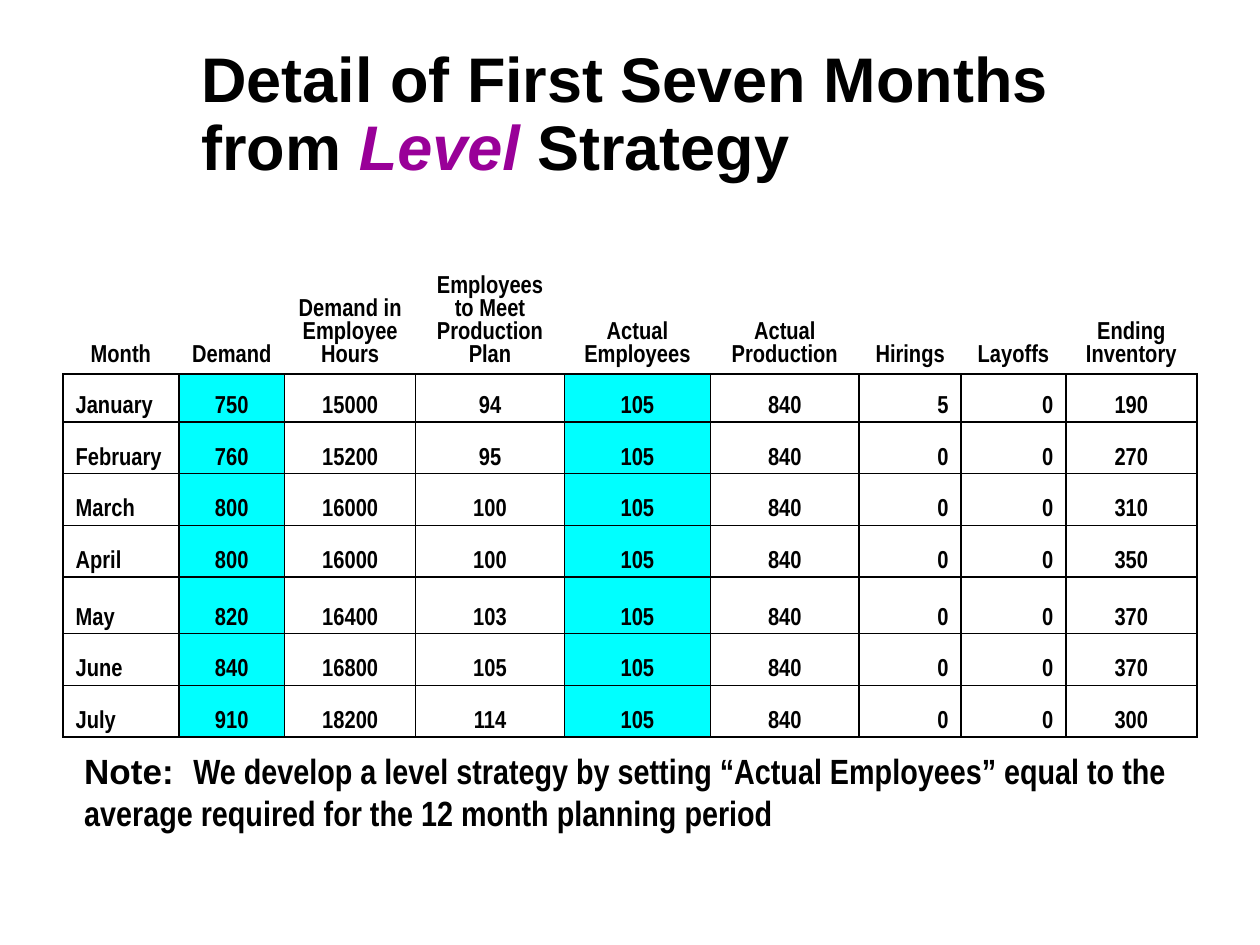
from lxml import etree
from pptx import Presentation
from pptx.dml.color import RGBColor
from pptx.enum.text import MSO_ANCHOR, PP_ALIGN
from pptx.oxml.ns import qn
from pptx.util import Inches, Pt

LEFT, CENTER, RIGHT = PP_ALIGN.LEFT, PP_ALIGN.CENTER, PP_ALIGN.RIGHT
TOP, MIDDLE, BOTTOM = MSO_ANCHOR.TOP, MSO_ANCHOR.MIDDLE, MSO_ANCHOR.BOTTOM

BLACK = RGBColor(0x00, 0x00, 0x00)
PURPLE = RGBColor(0x99, 0x00, 0x98)
CYAN = RGBColor(0x00, 0xFF, 0xFF)

HEADERS = ["Month", "Demand", "Demand in Employee Hours",
           "Employees to Meet Production Plan", "Actual Employees",
           "Actual Production", "Hirings", "Layoffs", "Ending Inventory"]
MONTHS = [
    ("January", 750, 15000, 94, 105, 840, 5, 0, 190),
    ("February", 760, 15200, 95, 105, 840, 0, 0, 270),
    ("March", 800, 16000, 100, 105, 840, 0, 0, 310),
    ("April", 800, 16000, 100, 105, 840, 0, 0, 350),
    ("May", 820, 16400, 103, 105, 840, 0, 0, 370),
    ("June", 840, 16800, 105, 105, 840, 0, 0, 370),
    ("July", 910, 18200, 114, 105, 840, 0, 0, 300),
]
COL_WIDTHS = [0.92, 0.84, 1.04, 1.18, 1.16, 1.18, 0.81, 0.83, 1.04]
ROW_HEIGHTS = [1.64, 0.38, 0.41, 0.41, 0.41, 0.45, 0.41, 0.41]
ALIGNMENTS = [LEFT] + [CENTER] * 5 + [RIGHT] * 2 + [CENTER]
HIGHLIGHTED = (HEADERS.index("Demand"), HEADERS.index("Actual Employees"))
EDGES = ("L", "R", "T", "B")


def style_run(r, size, font="Arial", color=BLACK, italic=False):
    r.font.name = font
    r.font.size = Pt(size)
    r.font.bold = True
    r.font.italic = italic
    r.font.color.rgb = color


def add_text(slide, box, size, runs, anchor=TOP, line_spacing=1.0):
    """Add a one-paragraph text box; runs are (text, font, colour, italic)."""
    tf = slide.shapes.add_textbox(*map(Inches, box)).text_frame
    tf.word_wrap = True
    tf.vertical_anchor = anchor
    p = tf.paragraphs[0]
    p.line_spacing = line_spacing
    for text, font, color, italic in runs:
        r = p.add_run()
        r.text = text
        style_run(r, size, font, color, italic)


def set_borders(cell, edges):
    """Draw black lines on the given edges and none on the others."""
    tcPr = cell._tc.get_or_add_tcPr()
    for edge in EDGES:
        ln = etree.SubElement(tcPr, qn("a:ln" + edge), w=str(Pt(1)))
        if edge in edges:
            fill = etree.SubElement(ln, qn("a:solidFill"))
            etree.SubElement(fill, qn("a:srgbClr"), val=str(BLACK))
        else:
            etree.SubElement(ln, qn("a:noFill"))


def fill_cell(cell, text, align, line_spacing, edges, color=None):
    cell.text = text
    cell.vertical_anchor = BOTTOM
    p = cell.text_frame.paragraphs[0]
    p.alignment = align
    p.line_spacing = line_spacing
    style_run(p.runs[0], 14, "Arial Narrow")
    set_borders(cell, edges)
    if color is None:
        cell.fill.background()
    else:
        cell.fill.solid()
        cell.fill.fore_color.rgb = color


def add_plan_table(slide):
    table = slide.shapes.add_table(
        len(ROW_HEIGHTS), len(COL_WIDTHS), Inches(0.5), Inches(1.33),
        Inches(sum(COL_WIDTHS)), Inches(sum(ROW_HEIGHTS))).table
    table.first_row = False
    table.horz_banding = False
    for column, width in zip(table.columns, COL_WIDTHS):
        column.width = Inches(width)
    for row, height in zip(table.rows, ROW_HEIGHTS):
        row.height = Inches(height)
    for col, header in enumerate(HEADERS):
        fill_cell(table.cell(0, col), header, CENTER, 1.0, "B")
    for row, values in enumerate(MONTHS, start=1):
        for col, value in enumerate(values):
            fill_cell(table.cell(row, col), str(value), ALIGNMENTS[col], 0.5,
                      EDGES, CYAN if col in HIGHLIGHTED else None)


def main():
    prs = Presentation()
    prs.slide_width, prs.slide_height = Inches(10), Inches(7.5)
    slide = prs.slides.add_slide(prs.slide_layouts[6])
    add_text(slide, (1.5, 0.3, 8, 1.25), 36, [
        ("Detail of First Seven Months from ", "Arial", BLACK, False),
        ("Level ", "Arial", PURPLE, True),
        ("Strategy", "Arial", BLACK, False),
    ], MIDDLE, 0.9)
    add_text(slide, (0.57, 5.9, 8.93, 0.77), 20, [
        ("Note:  ", "Arial", BLACK, False),
        ("We develop a level strategy by setting “Actual Employees” equal to "
         "the average required for the 12 month planning period",
         "Arial Narrow", BLACK, False),
    ])
    add_plan_table(slide)
    prs.save("out.pptx")


if __name__ == "__main__":
    main()
